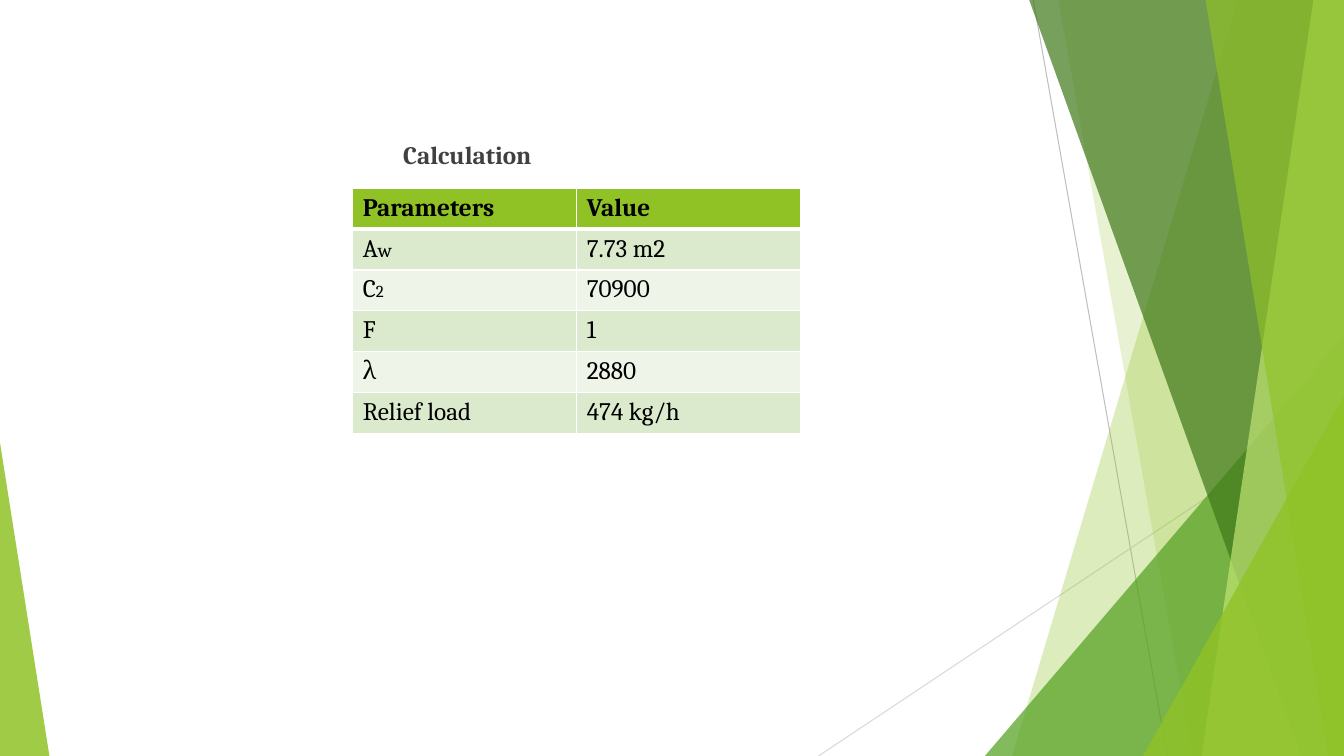
from dataclasses import dataclass

from lxml.etree import SubElement
from pptx import Presentation
from pptx.dml.color import RGBColor
from pptx.enum.shapes import MSO_CONNECTOR, MSO_SHAPE
from pptx.enum.text import MSO_ANCHOR
from pptx.oxml import parse_xml
from pptx.oxml.ns import nsdecls, qn
from pptx.util import Inches, Pt

WIDTH, HEIGHT = Inches(13.333), Inches(7.5)
FONT = "Cambria"
COLORS = {
    "lime": "90C226", "green": "54A021", "forest": "3F7819", "pale": "C0E474",
    "line": "BFBFBF", "faint line": "D9D9D9", "heading": "404040",
    "text": "000000", "border": "FFFFFF",
    "odd row": "DBE9CD", "even row": "EEF4E8",
}


# All positions below are percentages of the slide's width or height.
@dataclass(frozen=True)
class Ray:
    start: tuple[float, float]
    end: tuple[float, float]
    color: str


@dataclass(frozen=True)
class Band:
    """A full-height panel reaching the right edge, with a slanted left side."""
    top_left: float
    bottom_left: float
    color: str
    opacity: int


@dataclass(frozen=True)
class Wedge:
    """A right triangle on the bottom edge; tip is 0 for left, 1 for right."""
    left: float
    right: float
    top: float
    tip: int
    color: str
    opacity: int


@dataclass(frozen=True)
class Row:
    name: str
    value: str
    suffix: str = ""
    suffix_size: int = 18


RAYS = [
    Ray((76.88, 0), (86.85, 100), "line"),
    Ray((100, 53.73), (60.9, 100), "faint line"),
]
FACETS = [
    Band(92.1, 75.3, "lime", 30),
    Band(78.75, 88.73, "lime", 20),
    Wedge(73.28, 100, 44.4, 1, "green", 72),
    Band(76.58, 96.83, "forest", 70),
    Band(97.73, 89.4, "pale", 70),
    Band(89.7, 98.85, "lime", 65),
    Wedge(85.05, 100, 52.4, 1, "lime", 80),
    Wedge(0, 3.68, 58.53, 0, "lime", 85),
]
ROWS = [
    Row("Parameters", "Value"),
    Row("A", "7.73 m2", "w", 14),
    Row("C", "70900", "2", 12),
    Row("F", "1"),
    Row("λ", "2880"),
    Row("Relief load", "474 kg/h"),
]


def across(percent: float) -> int:
    return round(WIDTH * percent / 100)


def down(percent: float) -> int:
    return round(HEIGHT * percent / 100)


def rgb(name: str) -> RGBColor:
    return RGBColor.from_string(COLORS[name])


def draw_ray(page, ray: Ray) -> None:
    (x1, y1), (x2, y2) = ray.start, ray.end
    line = page.shapes.add_connector(
        MSO_CONNECTOR.STRAIGHT, across(x1), down(y1), across(x2), down(y2))
    line.line.color.rgb = rgb(ray.color)
    line.line.width = Pt(0.75)
    SubElement(line._element.spPr, qn("a:effectLst"))


def draw_facet(page, facet: Band | Wedge) -> None:
    if isinstance(facet, Band):
        builder = page.shapes.build_freeform(across(facet.top_left), 0)
        builder.add_line_segments(
            [(WIDTH, 0), (WIDTH, HEIGHT), (across(facet.bottom_left), HEIGHT)])
        shape = builder.convert_to_shape()
    else:
        shape = page.shapes.add_shape(
            MSO_SHAPE.ISOSCELES_TRIANGLE, across(facet.left), down(facet.top),
            across(facet.right - facet.left), down(100 - facet.top))
        shape.adjustments[0] = facet.tip
    shape.shadow.inherit = False
    shape.line.fill.background()
    shape.fill.solid()
    shape.fill.fore_color.rgb = rgb(facet.color)
    color = shape._element.spPr.find(qn("a:solidFill"))[0]
    SubElement(color, qn("a:alpha"), val=str(facet.opacity * 1000))


def style_font(font, color: str, bold: bool) -> None:
    font.name, font.size, font.bold = FONT, Pt(18), bold
    font.color.rgb = rgb(color)


def draw_heading(page) -> None:
    box = page.shapes.add_textbox(across(30), down(17.4), across(20), down(6))
    frame = box.text_frame
    frame.word_wrap = True
    frame.margin_left = 0
    frame.vertical_anchor = MSO_ANCHOR.MIDDLE
    para = frame.paragraphs[0]
    para.text = "Calculation"
    style_font(para.font, "heading", True)


def set_borders(cell, top: int, bottom: int) -> None:
    """Draw all four cell borders, with top and bottom widths in points."""
    widths = {"lnL": 1, "lnR": 1, "lnT": top, "lnB": bottom}
    properties = cell._tc.get_or_add_tcPr()
    for index, (side, width) in enumerate(widths.items()):
        properties.insert(index, parse_xml(
            f'<a:{side} {nsdecls("a")} w="{Pt(width)}"><a:solidFill>'
            f'<a:srgbClr val="{COLORS["border"]}"/></a:solidFill></a:{side}>'))


def draw_table(page) -> None:
    table = page.shapes.add_table(
        len(ROWS), 2, across(26.25), down(24.93), across(33.33), down(32.4)).table
    for index, row in enumerate(ROWS):
        header = index == 0
        fill = "lime" if header else "odd row" if index % 2 else "even row"
        for column, text in enumerate((row.name, row.value)):
            cell = table.cell(index, column)
            cell.fill.solid()
            cell.fill.fore_color.rgb = rgb(fill)
            set_borders(cell, 3 if index == 1 else 1, 3 if header else 1)
            para = cell.text_frame.paragraphs[0]
            para.text = text
            style_font(para.font, "text", header)
            if column == 0 and row.suffix:
                span = para.add_run()
                span.text = row.suffix
                span.font.size = Pt(row.suffix_size)


def main() -> None:
    deck = Presentation()
    deck.slide_width, deck.slide_height = WIDTH, HEIGHT
    page = deck.slides.add_slide(deck.slide_layouts[6])
    for ray in RAYS:
        draw_ray(page, ray)
    for facet in FACETS:
        draw_facet(page, facet)
    draw_heading(page)
    draw_table(page)
    deck.save("out.pptx")


if __name__ == "__main__":
    main()
